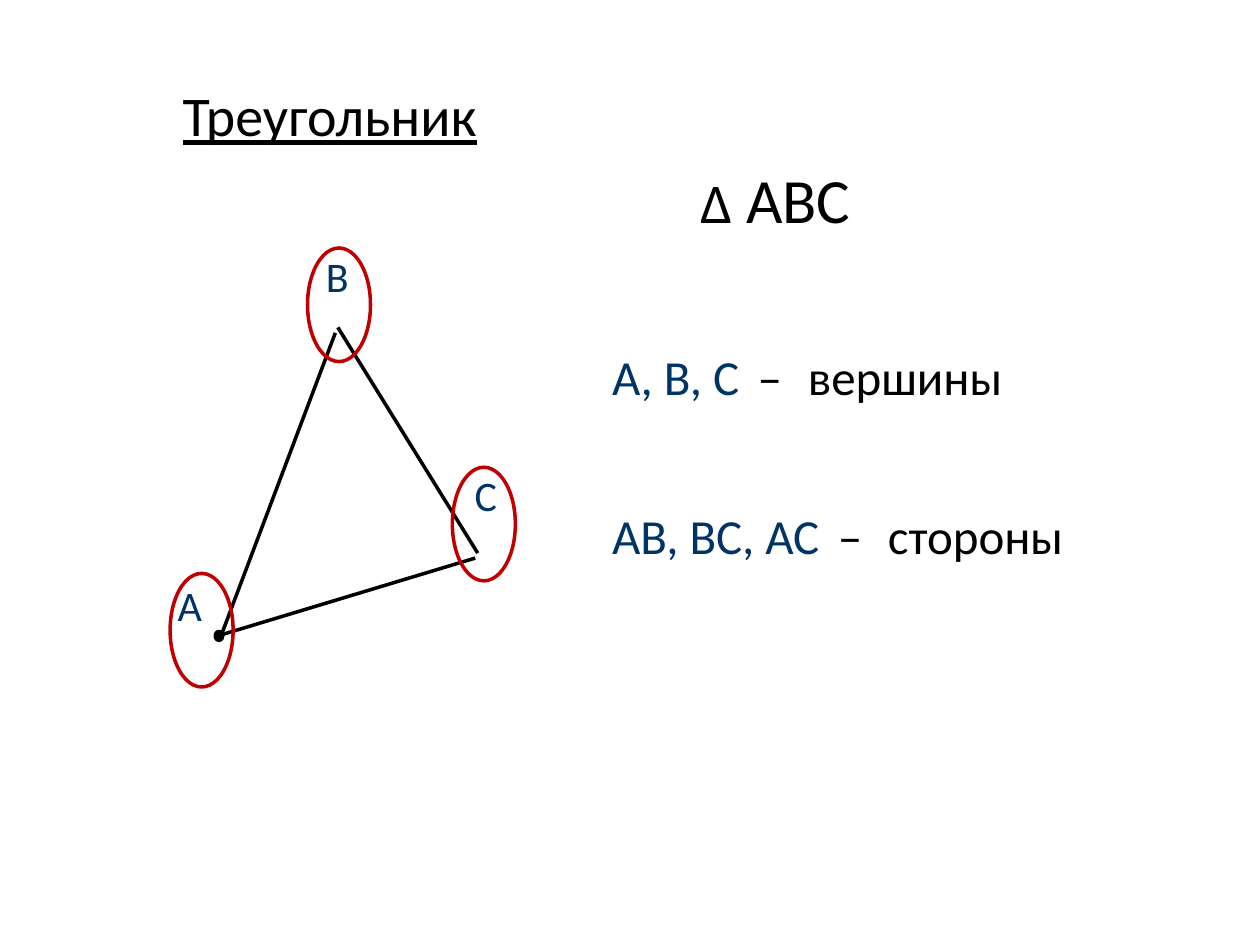
"""Build a slide that names the vertices and sides of triangle ABC."""
import pptx
import pptx.dml.color
import pptx.enum.shapes
import pptx.enum.text
import pptx.oxml
import pptx.util

Cm = pptx.util.Cm
SHAPE = pptx.enum.shapes.MSO_SHAPE
THEME = {
    "font": "Calibri", "ink": "000000", "name": "003366", "ring": "C00000",
    "title": 32, "delta": 32, "triangle": 36, "vertex": 24, "body": 28,
    "line": 2, "gap": 4.2,
}

TITLE = ((3.43, 1.5, 6.5, 1.63), [("Треугольник", "title", "ink")])
TEXTS = [
    ((3.33, 11.56, 1.02, 1.27), [("A", "vertex", "name")]),
    ((6.32, 4.93, 0.97, 1.27), [("B", "vertex", "name")]),
    ((9.32, 9.35, 0.97, 1.27), [("C", "vertex", "name")]),
    ((13.87, 3.12, 3.63, 1.8), [("Δ", "delta", "ink"), (" ABC", "triangle", "ink")]),
]
DEFINITIONS = [
    ((12.09, 6.86, 8.48, 1.45), "A, B, C", "вершины"),
    ((12.09, 10.06, 9.73, 1.45), "AB, BC, AC", "стороны"),
]
SIDES = [
    (6.81, 6.6, 9.63, 11.15),
    (4.47, 12.78, 6.76, 6.71),
    (4.45, 12.8, 9.58, 11.25),
]
POINT = (4.34, 12.73, 0.15, 0.18)
RINGS = [(3.43, 11.56), (6.2, 5.0), (9.12, 9.42)]
RING_SIZE = (1.27, 2.29)


def color(key):
    return pptx.dml.color.RGBColor.from_string(THEME[key])


def place(sp, box):
    sp.left, sp.top, sp.width, sp.height = map(Cm, box)


def write(sp, runs):
    tf = sp.text_frame
    tf.word_wrap = False
    tf.auto_size = pptx.enum.text.MSO_AUTO_SIZE.SHAPE_TO_FIT_TEXT
    tf.vertical_anchor = pptx.enum.text.MSO_ANCHOR.TOP
    p = tf.paragraphs[0]
    p.alignment = pptx.enum.text.PP_ALIGN.LEFT
    for text, size, ink in runs:
        r = p.add_run()
        r.text = text
        r.font.name = THEME["font"]
        r.font.size = pptx.util.Pt(THEME[size])
        r.font.color.rgb = color(ink)
    return p


def add_text(s, box, runs):
    return write(s.shapes.add_textbox(*map(Cm, box)), runs)


def add_definition(s, box, names, meaning):
    p = add_text(s, box, [(names, "body", "name"), (" – ", "body", "ink"),
                          (meaning, "body", "ink")])
    dash = p.runs[1]._r.get_or_add_rPr()
    dash.set("spc", str(round(THEME["gap"] * 100)))


def set_line(sp, ink):
    sp.line.color.rgb = color(ink)
    sp.line.width = pptx.util.Pt(THEME["line"])


def add_side(s, ends):
    sp = s.shapes.add_connector(
        pptx.enum.shapes.MSO_CONNECTOR.STRAIGHT, *map(Cm, ends))
    set_line(sp, "ink")
    sp._element.spPr.append(pptx.oxml.parse_xml(
        '<a:effectLst xmlns:a="http://schemas.openxmlformats.org/drawingml/2006/main"/>'))


def add_outline(s, kind, box, ink):
    sp = s.shapes.add_shape(kind, *map(Cm, box))
    sp.shadow.inherit = False
    sp.fill.background()
    set_line(sp, ink)
    return sp


def main():
    prs = pptx.Presentation()
    prs.slide_width, prs.slide_height = Cm(25.4), Cm(19.05)
    s = prs.slides.add_slide(prs.slide_layouts.get_by_name("Title Only"))
    box, runs = TITLE
    place(s.shapes.title, box)
    write(s.shapes.title, runs).runs[0].font.underline = True
    for ends in SIDES:
        add_side(s, ends)
    point = add_outline(s, SHAPE.FLOWCHART_CONNECTOR, POINT, "ink")
    point.fill.solid()
    point.fill.fore_color.rgb = color("ink")
    for box, runs in TEXTS:
        add_text(s, box, runs)
    for definition in DEFINITIONS:
        add_definition(s, *definition)
    for corner in RINGS:
        add_outline(s, SHAPE.OVAL, corner + RING_SIZE, "ring")
    prs.save("out.pptx")


if __name__ == "__main__":
    main()
